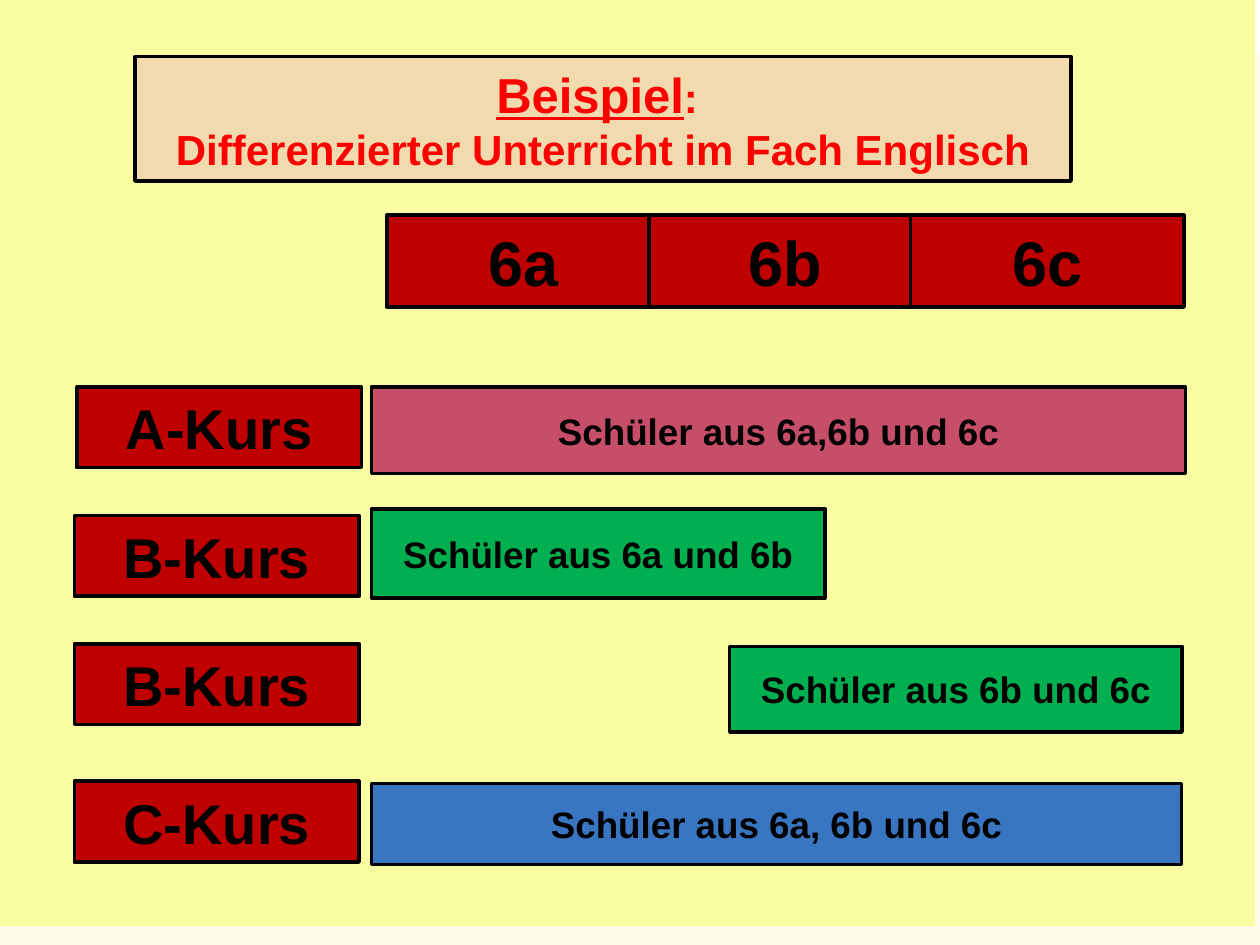
from dataclasses import dataclass

from pptx import Presentation
from pptx.dml.color import RGBColor
from pptx.enum.shapes import MSO_SHAPE
from pptx.enum.text import MSO_ANCHOR, MSO_AUTO_SIZE, PP_ALIGN
from pptx.util import Cm, Pt

RECTANGLE = MSO_SHAPE.RECTANGLE
MIDDLE = MSO_ANCHOR.MIDDLE
NO_AUTOFIT = MSO_AUTO_SIZE.NONE
CENTER = PP_ALIGN.CENTER


@dataclass(frozen=True)
class Theme:
    font: str = "Arial"
    background: str = "FFFDE9"
    corner: str = "FFFEF7"
    panel: str = "FAFCA2"
    heading_fill: str = "F0DAAE"
    heading_text: str = "FF0000"
    label: str = "BF0000"
    a_course: str = "C64E68"
    b_course: str = "00B050"
    c_course: str = "3876C2"
    ink: str = "000000"
    outline: float = 2
    heading_size: int = 28
    subheading_size: int = 24
    class_size: int = 36
    course_size: int = 32
    pupils_size: int = 21


THEME = Theme()

CLASSES = ("6a", "6b", "6c")
CLASS_LEFT, CLASS_STEP = 7.8, 5.28
COURSE_WIDTH, COURSE_HEIGHT = 5.74, 1.63
COURSES = (
    ("A-Kurs", (1.55, 7.8), "Schüler aus 6a,6b und 6c", (7.49, 7.8, 16.41, 1.75), THEME.a_course),
    ("B-Kurs", (1.5, 10.39), "Schüler aus 6a und 6b", (7.49, 10.26, 9.14, 1.8), THEME.b_course),
    ("B-Kurs", (1.5, 12.98), "Schüler aus 6b und 6c", (14.71, 13.03, 9.12, 1.73), THEME.b_course),
    ("C-Kurs", (1.5, 15.75), "Schüler aus 6a, 6b und 6c", (7.49, 15.8, 16.33, 1.63), THEME.c_course),
)


def add_text(paragraph, text, size, color=THEME.ink, underline=False):
    paragraph.alignment = CENTER
    run = paragraph.add_run()
    run.text = text
    font = run.font
    font.name = THEME.font
    font.size = Pt(size)
    font.bold = True
    font.underline = underline
    font.color.rgb = RGBColor.from_string(color)


def format_box(shape, fill, outlined=True):
    shape.fill.solid()
    shape.fill.fore_color.rgb = RGBColor.from_string(fill)
    if outlined:
        shape.line.color.rgb = RGBColor.from_string(THEME.ink)
        shape.line.width = Pt(THEME.outline)
    else:
        shape.line.fill.background()
    frame = shape.text_frame
    frame.word_wrap = True
    frame.auto_size = NO_AUTOFIT
    frame.vertical_anchor = MIDDLE


def add_box(slide, bounds, fill, outlined=True):
    shape = slide.shapes.add_shape(RECTANGLE, *map(Cm, bounds))
    shape.shadow.inherit = False
    format_box(shape, fill, outlined)
    return shape


def add_label(slide, bounds, text, size, fill=THEME.label):
    shape = add_box(slide, bounds, fill)
    add_text(shape.text_frame.paragraphs[0], text, size)


def add_backdrop(slide):
    background = slide.background.fill
    background.solid()
    background.fore_color.rgb = RGBColor.from_string(THEME.background)
    add_box(slide, (25.25, 0, 0.15, 1.09), THEME.corner, outlined=False)
    add_box(slide, (0, 0, 25.3, 18.67), THEME.panel, outlined=False)


def format_heading(slide):
    title = slide.shapes.title
    title.element.getparent().append(title.element)
    title.left, title.top, title.width, title.height = map(Cm, (2.72, 1.14, 18.87, 2.51))
    format_box(title, THEME.heading_fill)
    first = title.text_frame.paragraphs[0]
    second = title.text_frame.add_paragraph()
    for paragraph in (first, second):
        paragraph.space_before = Pt(0)
    add_text(first, "Beispiel", THEME.heading_size, THEME.heading_text, underline=True)
    add_text(first, ": ", THEME.subheading_size, THEME.heading_text)
    add_text(second, "Differenzierter Unterricht im Fach Englisch",
             THEME.subheading_size, THEME.heading_text)


def add_classes(slide):
    for column, name in enumerate(CLASSES):
        bounds = (CLASS_LEFT + column * CLASS_STEP, 4.34, 5.51, 1.85)
        add_label(slide, bounds, name, THEME.class_size)


def add_courses(slide):
    for course, position, pupils, bounds, fill in COURSES:
        add_label(slide, (*position, COURSE_WIDTH, COURSE_HEIGHT), course, THEME.course_size)
        add_label(slide, bounds, pupils, THEME.pupils_size, fill)


def main():
    presentation = Presentation()
    presentation.slide_width = Cm(25.4)
    presentation.slide_height = Cm(19.05)
    slide = presentation.slides.add_slide(presentation.slide_layouts.get_by_name("Title Only"))
    add_backdrop(slide)
    format_heading(slide)
    add_classes(slide)
    add_courses(slide)
    presentation.save("out.pptx")


if __name__ == "__main__":
    main()
